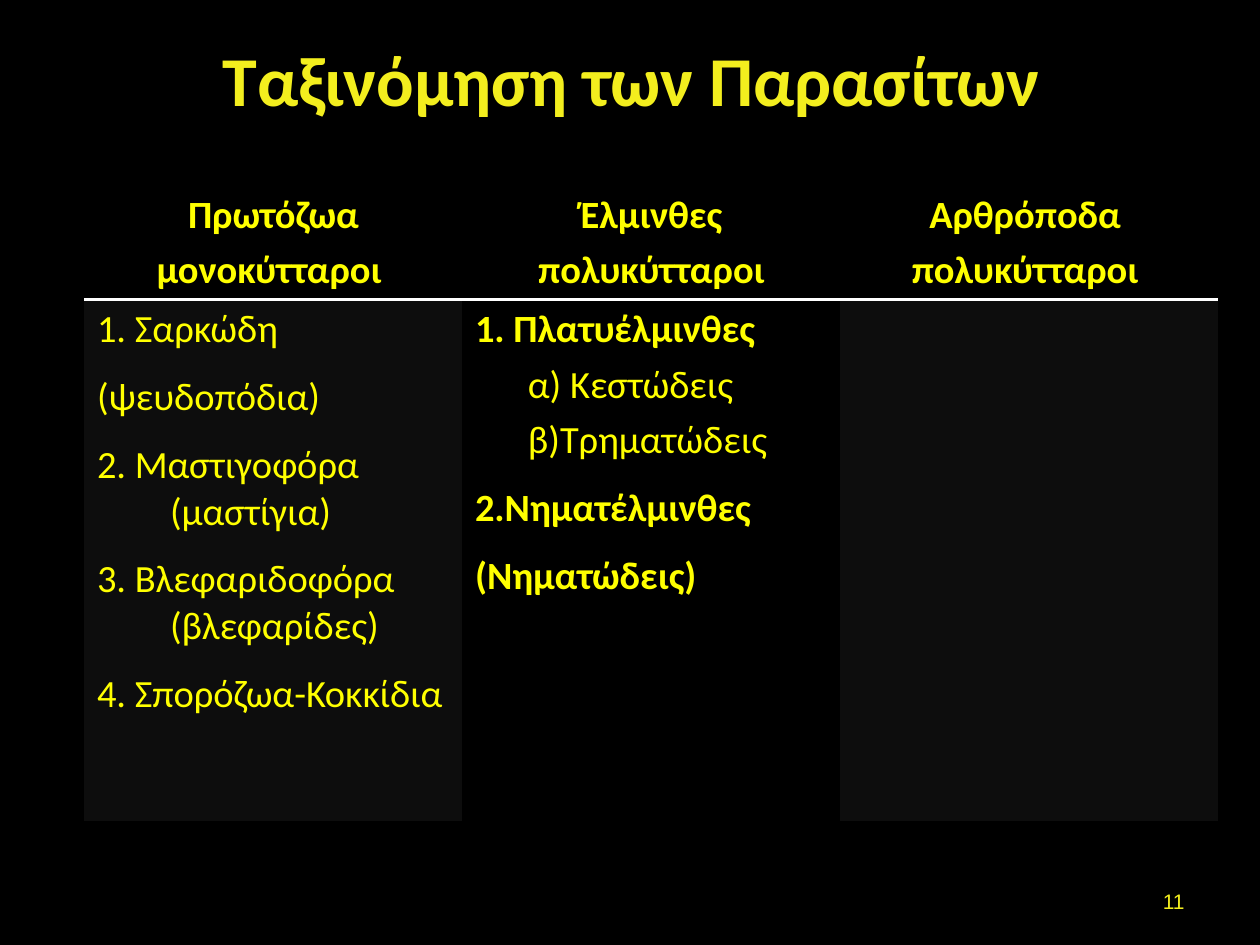
from lxml import etree
from pptx import Presentation, util as u
from pptx.dml.color import RGBColor
from pptx.enum import text as t
from pptx.oxml import ns

YELLOW, TITLE_YELLOW = "FFFF00", "F3EE1E"
BLACK, PANEL, WHITE = "000000", "0D0D0D", "FFFFFF"
NO_GRID_STYLE = "{2D5ABB26-0587-4C30-8999-92F81FD0307C}"
TIGHT, LOOSE = 5, 12

HEADERS = [
    ("Πρωτόζωα", "μονοκύτταροι "),
    ("Έλμινθες", "πολυκύτταροι"),
    ("Αρθρόποδα ", "πολυκύτταροι "),
]
PROTOZOA = [
    "1. Σαρκώδη",
    "(ψευδοπόδια)",
    "2. Μαστιγοφόρα (μαστίγια)",
    "3. Βλεφαριδοφόρα (βλεφαρίδες)",
    "4. Σπορόζωα-Κοκκίδια",
]
HELMINTHS = [
    ("1. Πλατυέλμινθες", dict(bold=True)),
    ("α) Κεστώδεις", dict(level=1, margin=1, before=TIGHT)),
    ("β)Τρηματώδεις", dict(level=1, margin=1, before=TIGHT)),
    ("2.Νηματέλμινθες", dict(bold=True, before=LOOSE)),
    ("(Νηματώδεις)", dict(bold=True, before=LOOSE)),
]


def color(value):
    return RGBColor.from_string(value)


def write(frame, content, size=22, font="Calibri", fill=YELLOW, bold=False,
          align=t.PP_ALIGN.LEFT, before=0, margin=0, hanging=0, level=0):
    paragraph = frame.paragraphs[0]
    if paragraph.runs:
        paragraph = frame.add_paragraph()
    paragraph.alignment = align
    paragraph.level = level
    paragraph.space_before = u.Pt(before)
    properties = paragraph._p.get_or_add_pPr()
    properties.set("marL", str(u.Inches(margin)))
    properties.set("indent", str(u.Inches(-hanging)))
    run = paragraph.add_run()
    run.text = content
    run.font.size = u.Pt(size)
    run.font.name = font
    run.font.bold = bold
    run.font.color.rgb = color(fill)


def add_text(slide, content, left, top, width, height, **style):
    box = slide.shapes.add_textbox(*map(u.Inches, (left, top, width, height)))
    frame = box.text_frame
    frame.word_wrap = True
    frame.vertical_anchor = t.MSO_ANCHOR.MIDDLE
    write(frame, content, **style)


def paint(cell, fill, edge):
    cell.fill.solid()
    cell.fill.fore_color.rgb = color(fill)
    line = etree.Element(ns.qn("a:" + edge), w=str(u.Pt(2)))
    solid = etree.SubElement(line, ns.qn("a:solidFill"))
    etree.SubElement(solid, ns.qn("a:srgbClr"), val=WHITE)
    cell._tc.get_or_add_tcPr().insert(0, line)


def add_classification(slide):
    frame = slide.shapes.add_table(2, 3, *map(u.Inches, (0.67, 1.47, 9, 5.05)))
    table = frame.table
    table._tbl.tblPr.find(ns.qn("a:tableStyleId")).text = NO_GRID_STYLE
    table.horz_banding = False
    for row, height in zip(table.rows, (0.91, 4.14)):
        row.height = u.Inches(height)
    for index, lines in enumerate(HEADERS):
        header, body = table.cell(0, index), table.cell(1, index)
        paint(header, BLACK, "lnB")
        paint(body, BLACK if index == 1 else PANEL, "lnT")
        for number, line in enumerate(lines):
            write(header.text_frame, line, bold=True, align=t.PP_ALIGN.CENTER,
                  before=TIGHT * number, margin=0.78, hanging=0.78)
    for number, line in enumerate(PROTOZOA):
        write(table.cell(1, 0).text_frame, line, margin=0.58, hanging=0.58,
              before=LOOSE if number else 0)
    for line, style in HELMINTHS:
        write(table.cell(1, 1).text_frame, line,
              **{"margin": 0.58, "hanging": 0.58, **style})


def main():
    presentation = Presentation()
    presentation.slide_width = u.Inches(10)
    presentation.slide_height = u.Inches(7.5)
    slide = presentation.slides.add_slide(presentation.slide_layouts[6])
    slide.background.fill.solid()
    slide.background.fill.fore_color.rgb = color(BLACK)
    add_text(slide, "Ταξινόμηση των Παρασίτων", 0.51, 0.13, 9, 0.99, size=40,
             fill=TITLE_YELLOW, bold=True, align=t.PP_ALIGN.CENTER)
    add_classification(slide)
    add_text(slide, "11", 7.17, 6.95, 2.33, 0.4, size=12, font="Arial",
             fill=TITLE_YELLOW, align=t.PP_ALIGN.RIGHT)
    presentation.save("out.pptx")


if __name__ == "__main__":
    main()
